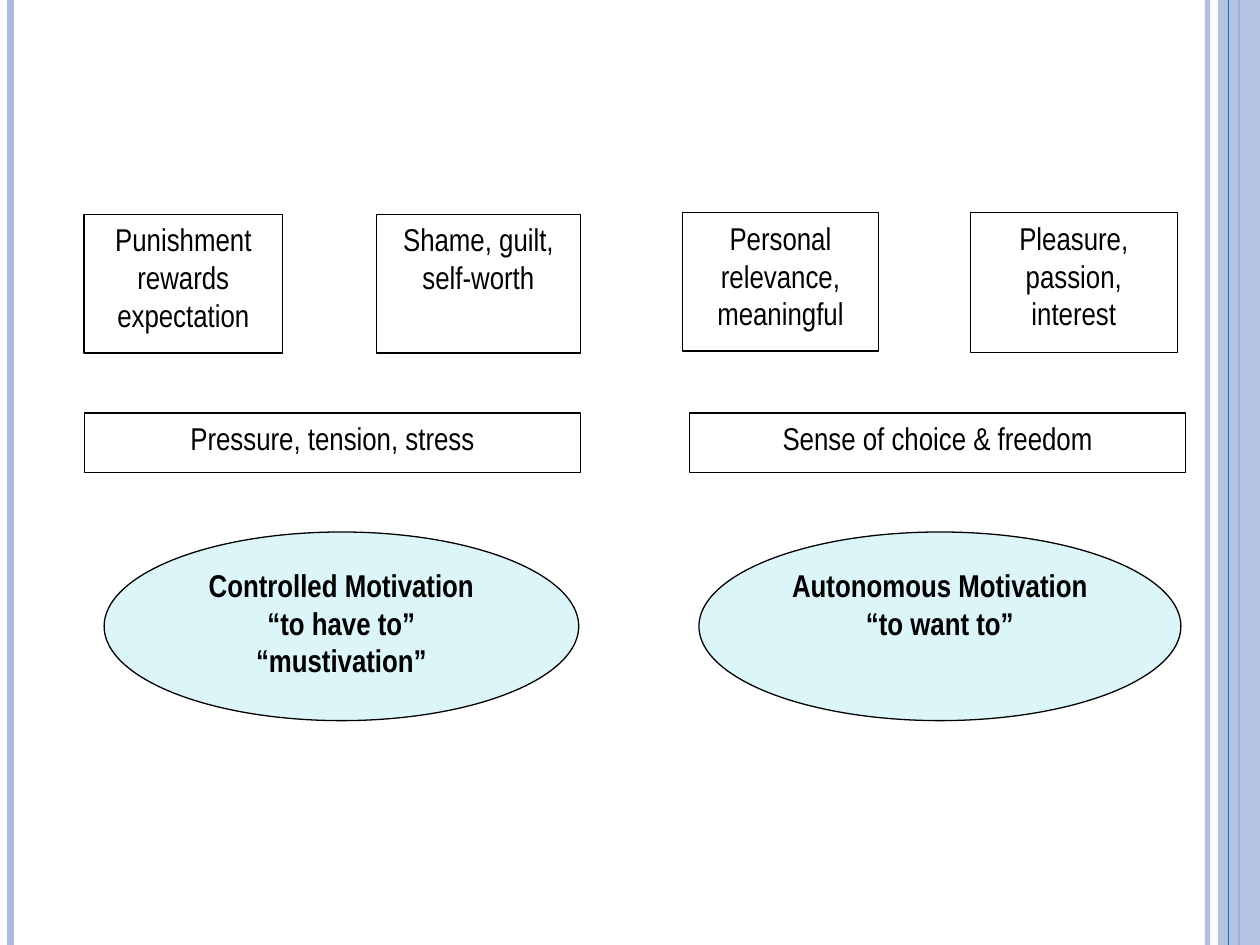
from lxml.etree import SubElement
from pptx import Presentation
from pptx.dml.color import RGBColor
from pptx.enum.shapes import MSO_CONNECTOR as Connector, MSO_SHAPE as Shape
from pptx.enum.text import MSO_ANCHOR as Anchor, PP_ALIGN as Align
from pptx.oxml.ns import qn
from pptx.util import Pt

WIDTH, HEIGHT = 720, 540
BLACK = RGBColor(0x00, 0x00, 0x00)
WHITE = RGBColor(0xFF, 0xFF, 0xFF)
AQUA = RGBColor(0xDB, 0xF5, 0xF9)
LAVENDER = RGBColor(0xAB, 0xBB, 0xDF)
BLUE = RGBColor(0x0F, 0x6F, 0xC6)

FONT = {"name": "Arial Narrow", "size": Pt(18)}
FRAME = {"word_wrap": True, "vertical_anchor": Anchor.TOP}

CAUSES = [
    (554.4, 121.5, 118.4, 80, ["Pleasure, passion, interest"]),
    (390, 121.5, 112, 79.2, ["Personal relevance, meaningful"]),
    (48, 122.4, 113.6, 79.4, ["Punishment rewards", "expectation"]),
    (215, 122.4, 116.8, 79.4, ["Shame, guilt, self-worth"]),
]
MOTIVATIONS = [
    (399.4, 304, 275.4, 107.8, ["Autonomous Motivation", "“to want to”"]),
    (59.5, 304, 271.2, 107.8,
     ["Controlled Motivation", "“to have to”", "“mustivation”"]),
]
FEELINGS = [
    (48.2, 236, 283.6, 34, ["Pressure, tension, stress"]),
    (394, 236, 283.6, 34, ["Sense of choice & freedom"]),
]


def set_all(target, values):
    """Set every attribute named in a dict of format values."""
    for name, value in values.items():
        setattr(target, name, value)


def set_opacity(element, percent):
    """Make the solid colour inside an element partly transparent."""
    color = next(element.iter(qn("a:srgbClr")))
    SubElement(color, qn("a:alpha"), val=str(percent * 1000))


def add_stripe(page, x, color, weight, opacity=100):
    """Draw a vertical line over the full height of the page."""
    stripe = page.shapes.add_connector(
        Connector.STRAIGHT, Pt(x), Pt(0), Pt(x), Pt(HEIGHT))
    stripe.line.color.rgb = color
    stripe.line.width = Pt(weight)
    if opacity < 100:
        set_opacity(stripe.line._get_or_add_ln(), opacity)
    SubElement(stripe._element.spPr, qn("a:effectLst"))


def add_shape(page, kind, bounds, fill):
    """Add a filled preset shape without a shadow."""
    shape = page.shapes.add_shape(kind, *map(Pt, bounds))
    shape.shadow.inherit = False
    shape.fill.solid()
    shape.fill.fore_color.rgb = fill
    return shape


def add_band(page):
    """Draw the translucent band along the right edge."""
    band = add_shape(page, Shape.RECTANGLE, (696, 0, 24, HEIGHT), LAVENDER)
    band.line.fill.background()
    set_opacity(band._element.spPr, 87)


def add_label(page, kind, bounds, lines, fill, bold):
    """Add an outlined shape with centred lines of text."""
    label = add_shape(page, kind, bounds, fill)
    label.line.color.rgb = BLACK
    label.line.width = Pt(0.75)
    frame = label.text_frame
    set_all(frame, FRAME)
    frame.text = "\n".join(lines)
    for para in frame.paragraphs:
        para.alignment = Align.CENTER
        set_all(para.font, {**FONT, "bold": bold})
        para.font.color.rgb = BLACK


def add_labels(page, kind, items, fill=WHITE, bold=False):
    """Add one row of labels of the same kind."""
    for *bounds, lines in items:
        add_label(page, kind, bounds, lines, fill, bold)


def main():
    """Build the motivation slide and save the deck."""
    deck = Presentation()
    set_all(deck, {"slide_width": Pt(WIDTH), "slide_height": Pt(HEIGHT)})
    page = deck.slides.add_slide(deck.slide_layouts[6])
    add_stripe(page, 690, LAVENDER, 3, 93)
    add_stripe(page, 6, LAVENDER, 4.5)
    add_stripe(page, 708, BLUE, 1.5)
    add_band(page)
    add_stripe(page, 702, BLUE, 0.75)
    add_labels(page, Shape.RECTANGLE, CAUSES)
    add_labels(page, Shape.OVAL, MOTIVATIONS, AQUA, True)
    add_labels(page, Shape.RECTANGLE, FEELINGS)
    deck.save("out.pptx")


if __name__ == "__main__":
    main()
